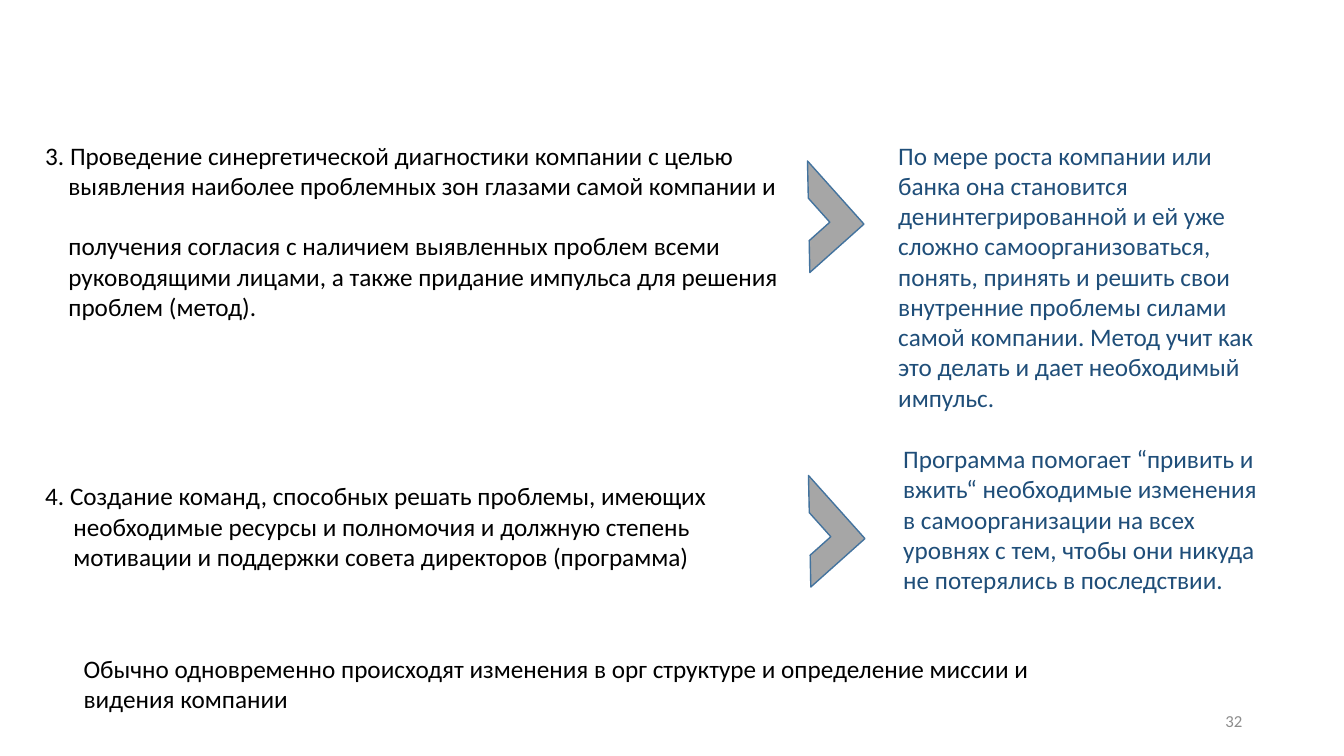
from dataclasses import dataclass

from pptx import Presentation
from pptx.dml.color import RGBColor
from pptx.enum.shapes import MSO_SHAPE
from pptx.enum.text import MSO_ANCHOR, PP_ALIGN
from pptx.slide import Slide
from pptx.util import Inches, Pt

HALF_FRAME = MSO_SHAPE.HALF_FRAME
TOP, MIDDLE = MSO_ANCHOR.TOP, MSO_ANCHOR.MIDDLE
LEFT, RIGHT = PP_ALIGN.LEFT, PP_ALIGN.RIGHT


@dataclass(frozen=True)
class Theme:
    font: str = "Calibri"
    body: int = 18
    small: int = 12
    black: RGBColor = RGBColor(0x00, 0x00, 0x00)
    navy: RGBColor = RGBColor(0x1F, 0x4E, 0x79)
    number: RGBColor = RGBColor(0x8C, 0x8C, 0x8C)
    arrow_fill: RGBColor = RGBColor(0xA6, 0xA6, 0xA6)
    arrow_line: RGBColor = RGBColor(0x43, 0x73, 0x9E)


THEME = Theme()


@dataclass(frozen=True)
class TextBlock:
    left: float
    top: float
    width: float
    height: float
    lines: tuple[str, ...]
    color: RGBColor = THEME.black
    size: int = THEME.body
    align: PP_ALIGN = LEFT
    anchor: MSO_ANCHOR = TOP
    hang: float = 0  # indent of every line after the first
    gap_at: int = 0  # index of the line that has an empty line's space above it
    margin_right: float = 0.1


@dataclass(frozen=True)
class Arrow:
    left: float
    top: float


BLOCKS = (
    TextBlock(9.42, 6.95, 3, 0.4, ("32",), THEME.number, THEME.small, RIGHT, MIDDLE),
    TextBlock(0.35, 1.34, 7.52, 1.62, (
        "3. Проведение синергетической диагностики компании с целью",
        "выявления наиболее проблемных зон глазами самой компании и",
        "получения согласия с наличием выявленных проблем всеми",
        "руководящими лицами, а также придание импульса для решения",
        "проблем (метод).",
    ), hang=0.23, gap_at=2, margin_right=0),
    TextBlock(0.35, 4.72, 7.52, 1.01, (
        "4. Создание команд, способных решать проблемы, имеющих",
        "необходимые ресурсы и полномочия и должную степень",
        "мотивации и поддержки совета директоров (программа)",
    ), hang=0.28),
    TextBlock(8.81, 1.34, 3.85, 2.83, (
        "По мере роста компании или банка она становится денинтегрированной "
        "и ей уже сложно самоорганизоваться, понять, принять и решить свои "
        "внутренние проблемы силами самой компании. Метод учит как это "
        "делать и дает необходимый импульс.",
    ), THEME.navy),
    TextBlock(8.86, 4.35, 3.85, 1.62, (
        "Программа помогает “привить и вжить“ необходимые изменения в "
        "самоорганизации на всех уровнях с тем, чтобы они никуда не "
        "потерялись в последствии.",
    ), THEME.navy),
    TextBlock(0.73, 6.43, 10.49, 0.71, (
        "Обычно одновременно происходят изменения в орг структуре и "
        "определение миссии и видения компании",
    ), margin_right=0.5),
)
ARROWS = (Arrow(7.66, 1.73), Arrow(7.67, 4.85))


def add_text(s: Slide, block: TextBlock) -> None:
    box = s.shapes.add_textbox(Inches(block.left), Inches(block.top),
                               Inches(block.width), Inches(block.height))
    tf = box.text_frame
    tf.word_wrap = True
    tf.vertical_anchor = block.anchor
    tf.margin_right = Inches(block.margin_right)
    tf.text = "\n".join(block.lines)
    for i, p in enumerate(tf.paragraphs):
        p.alignment = block.align
        p.font.name = THEME.font
        p.font.size = Pt(block.size)
        p.font.color.rgb = block.color
        if i and block.hang:
            p._p.get_or_add_pPr().set("marL", str(Inches(block.hang)))
        if i and i == block.gap_at:
            p.space_before = Pt(1.2 * block.size)


def add_arrow(s: Slide, arrow: Arrow) -> None:
    """Turn a half frame so that its corner points right."""
    sp = s.shapes.add_shape(HALF_FRAME, Inches(arrow.left), Inches(arrow.top),
                            Inches(0.72), Inches(0.84))
    sp.rotation = 138.2
    sp.shadow.inherit = False
    sp.fill.solid()
    sp.fill.fore_color.rgb = THEME.arrow_fill
    sp.line.color.rgb = THEME.arrow_line
    sp.line.width = Pt(1)


def main() -> None:
    prs = Presentation()
    prs.slide_width, prs.slide_height = Inches(13.33), Inches(7.5)
    s = prs.slides.add_slide(prs.slide_layouts[6])
    for block in BLOCKS:
        add_text(s, block)
    for arrow in ARROWS:
        add_arrow(s, arrow)
    prs.save("out.pptx")


if __name__ == "__main__":
    main()
